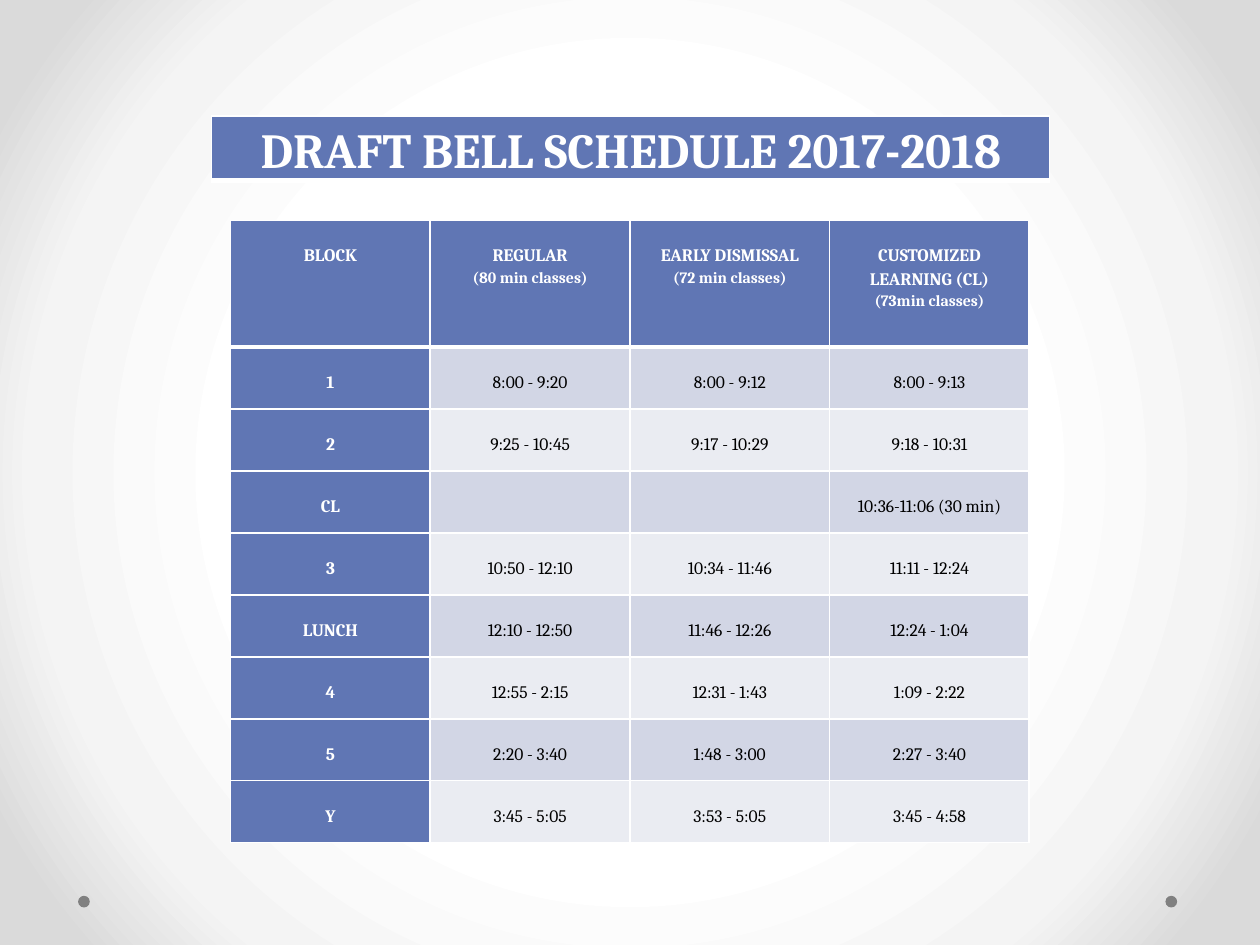
from dataclasses import dataclass

from lxml import etree
from pptx import Presentation
from pptx.dml.color import RGBColor
from pptx.enum.shapes import MSO_SHAPE
from pptx.enum.text import MSO_ANCHOR, PP_ALIGN
from pptx.oxml import parse_xml
from pptx.oxml.ns import nsdecls, qn
from pptx.util import Inches, Pt

ELLIPSE = MSO_SHAPE.OVAL
CENTER = PP_ALIGN.CENTER
TOP = MSO_ANCHOR.TOP
BLANK_LAYOUT = 6


@dataclass(frozen=True)
class Theme:
    font: str = "Cambria"
    accent: str = "6076B4"
    light: str = "FFFFFF"
    dark: str = "000000"
    bands: tuple = ("D2D6E5", "EAECF2")
    dot: str = "808080"
    backdrop: tuple = ((50, "FFFFFF"), (76, "F4F4F4"), (92, "DADADA"))
    title_size: int = 28
    body_size: int = 10
    note_size: int = 9
    thin: int = 1
    thick: int = 3
    line_spacing: float = 1.15
    side_margin: float = 0.07
    lead_margin: float = 0.18


THEME = Theme()
TITLE = "DRAFT BELL SCHEDULE 2017-2018"
HEADINGS = (
    (("BLOCK", THEME.body_size),),
    (("REGULAR", THEME.body_size), ("(80 min classes)", THEME.note_size)),
    (("EARLY DISMISSAL", THEME.body_size), ("(72 min classes)", THEME.note_size)),
    (("CUSTOMIZED LEARNING (CL)", THEME.body_size), ("(73min classes)", THEME.note_size)),
)
SCHEDULE = (
    ("1", "8:00 - 9:20", "8:00 - 9:12", "8:00 - 9:13"),
    ("2", "9:25 - 10:45", "9:17 - 10:29", "9:18 - 10:31"),
    ("CL", "", "", "10:36-11:06 (30 min)"),
    ("3", "10:50 - 12:10", "10:34 - 11:46", "11:11 - 12:24"),
    ("LUNCH", "12:10 - 12:50", "11:46 - 12:26", "12:24 - 1:04"),
    ("4", "12:55 - 2:15", "12:31 - 1:43", "1:09 - 2:22"),
    ("5", "2:20 - 3:40", "1:48 - 3:00", "2:27 - 3:40"),
    ("Y", "3:45 - 5:05", "3:53 - 5:05", "3:45 - 4:58"),
)


def write_text(paragraph, text, *, size, color, bold, font, spacing):
    paragraph.alignment = CENTER
    paragraph.line_spacing = spacing
    paragraph.font.size = Pt(size)
    if text:
        run = paragraph.add_run()
        run.text = text
        run.font.name = font
        run.font.size = Pt(size)
        run.font.bold = bold
        run.font.color.rgb = RGBColor.from_string(color)


class SlideBuilder:
    def __init__(self, presentation, theme):
        self.theme = theme
        self.width = presentation.slide_width
        self.height = presentation.slide_height
        self.slide = presentation.slides.add_slide(presentation.slide_layouts[BLANK_LAYOUT])

    def box(self, left, top, width, height):
        return (
            round(self.width * left / 100),
            round(self.height * top / 100),
            round(self.width * width / 100),
            round(self.height * height / 100),
        )

    def backdrop(self):
        self.slide.background.fill.solid()
        properties = self.slide.element.find(".//" + qn("p:bgPr"))
        stops = "".join(
            f'<a:gs pos="{position * 1000}"><a:srgbClr val="{color}"/></a:gs>'
            for position, color in self.theme.backdrop
        )
        gradient = parse_xml(
            f'<a:gradFill {nsdecls("a")} rotWithShape="1"><a:gsLst>{stops}</a:gsLst>'
            '<a:path path="circle"><a:fillToRect l="50000" t="50000" r="50000" b="50000"/>'
            "</a:path></a:gradFill>"
        )
        properties.replace(properties[0], gradient)

    def dot(self, left, top, width, height):
        shape = self.slide.shapes.add_shape(ELLIPSE, *self.box(left, top, width, height))
        shape.shadow.inherit = False
        shape.fill.solid()
        shape.fill.fore_color.rgb = RGBColor.from_string(self.theme.dot)
        shape.line.fill.background()

    def table(self, rows, columns, left, top, width, height, header_height):
        area = self.box(left, top, width, height)
        table = self.slide.shapes.add_table(rows, columns, *area).table
        table.first_row = table.horz_banding = False
        for column in table.columns:
            column.width = area[2] // columns
        header = round(self.height * header_height / 100)
        for index, row in enumerate(table.rows):
            row.height = (area[3] - header) // (rows - 1) if index else header
        return table

    def borders(self, cell, top, bottom):
        properties = cell._tc.get_or_add_tcPr()
        thin = self.theme.thin
        sides = (("lnL", thin), ("lnR", thin), ("lnT", top), ("lnB", bottom))
        for index, (side, width) in enumerate(sides):
            line = etree.Element(qn(f"a:{side}"), w=str(Pt(width)))
            fill = etree.SubElement(line, qn("a:solidFill"))
            etree.SubElement(fill, qn("a:srgbClr"), val=self.theme.light)
            properties.insert(index, line)

    def cell(self, cell, lines, fill, strong, lead, top, bottom):
        theme = self.theme
        cell.margin_left = cell.margin_right = Inches(theme.side_margin)
        cell.margin_top = Inches(lead)
        cell.margin_bottom = 0
        cell.vertical_anchor = TOP
        cell.fill.solid()
        cell.fill.fore_color.rgb = RGBColor.from_string(fill)
        self.borders(cell, top, bottom)
        frame = cell.text_frame
        for index, (text, size) in enumerate(lines):
            paragraph = frame.add_paragraph() if index else frame.paragraphs[0]
            write_text(
                paragraph,
                text,
                size=size,
                color=theme.light if strong else theme.dark,
                bold=strong,
                font=theme.font,
                spacing=theme.line_spacing,
            )

    def title(self, text, left, top, width, height):
        theme = self.theme
        table = self.table(1, 1, left, top, width, height, height)
        self.cell(table.cell(0, 0), ((text, theme.title_size),), theme.accent, True, 0,
                  theme.thin, theme.thick)

    def schedule(self, headings, entries, left, top, width, height, header_height):
        theme = self.theme
        table = self.table(len(entries) + 1, len(headings), left, top, width, height,
                           header_height)
        for column, lines in enumerate(headings):
            self.cell(table.cell(0, column), lines, theme.accent, True, theme.lead_margin,
                      theme.thin, theme.thick)
        for row, entry in enumerate(entries):
            band = theme.bands[row % len(theme.bands)]
            upper = theme.thin if row else theme.thick
            for column, text in enumerate(entry):
                strong = column == 0
                self.cell(table.cell(row + 1, column), ((text, theme.body_size),),
                          theme.accent if strong else band, strong, theme.lead_margin,
                          upper, theme.thin)


def main():
    presentation = Presentation()
    presentation.slide_width = Inches(10)
    presentation.slide_height = Inches(7.5)
    builder = SlideBuilder(presentation, THEME)
    builder.backdrop()
    for left in (92.5, 6.2):
        builder.dot(left, 94.8, 0.93, 1.24)
    builder.title(TITLE, 16.8, 12.27, 66.5, 6.53)
    builder.schedule(HEADINGS, SCHEDULE, 18.3, 23.33, 63.4, 65.87, 13.4)
    presentation.save("out.pptx")


if __name__ == "__main__":
    main()
